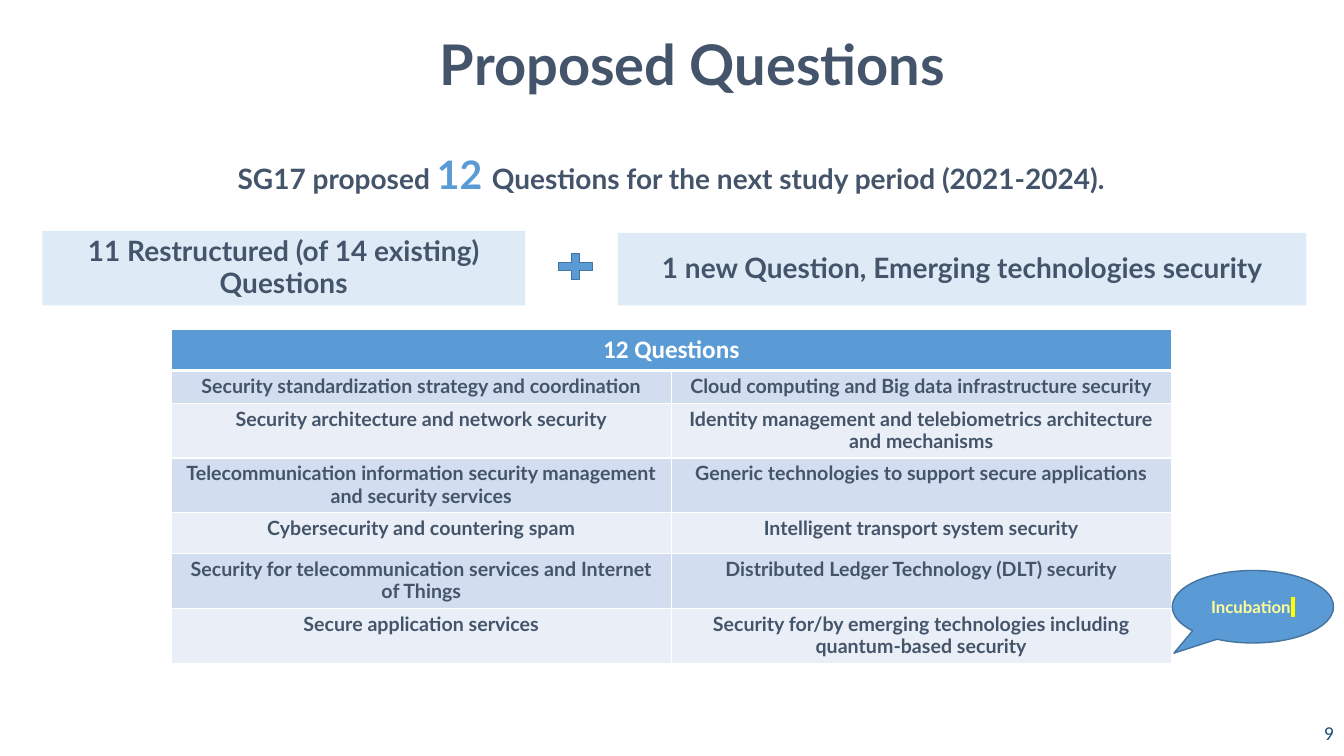
from dataclasses import dataclass

import pptx
import pptx.dml.color
import pptx.enum.shapes
import pptx.enum.text
import pptx.oxml
import pptx.oxml.ns
import pptx.util
from lxml import etree

Pt = pptx.util.Pt
ALIGN = pptx.enum.text.PP_ALIGN
ANCHOR = pptx.enum.text.MSO_ANCHOR
SHAPE = pptx.enum.shapes.MSO_SHAPE
qn = pptx.oxml.ns.qn

NAVY, BLUE, EDGE, PALE, WHITE = "44546A", "5B9BD5", "43739E", "DEEBF7", "FFFFFF"
BANDS = ("D2DEEF", "EAEFF7")
HEADER_HEIGHT = 29.2
FIRST_ROW_HEIGHT = 23.4
COLUMN_WIDTH = 357.1


@dataclass
class Style:
    size: float
    color: str = NAVY
    font: str = "Lato"
    bold: bool = True
    align: ALIGN = ALIGN.CENTER
    spaced: bool = False


@dataclass
class Box:
    left: float
    top: float
    width: float
    height: float
    text: str
    style: Style
    kind: SHAPE | None = None
    fill: str | None = None
    line: str | None = None


BODY = Style(20, spaced=True)
CELL = Style(14, spaced=True)
HEADER = Style(18, WHITE, "Calibri")

TITLE = Box(82.1, 19.4, 825.1, 51.8, "Proposed Questions", Style(40))
SUMMARY = Box(74.2, 106.6, 810.7, 39.6, "SG17 proposed ", BODY)
NEW = Box(441.4, 166.3, 491.8, 51.8, "1 new Question, Emerging technologies security",
          BODY, SHAPE.RECTANGLE, PALE)
RESTRUCTURED = Box(30.2, 164.9, 344.9, 53.3, "11 Restructured (of 14 existing) Questions",
                   BODY, SHAPE.RECTANGLE, PALE)
PLUS = Box(394.6, 177.8, 33.1, 25.2, "", BODY, SHAPE.MATH_PLUS, BLUE, EDGE)
NUMBER = Box(743.8, 511.2, 216, 28.8, "9",
             Style(14, "1F4E79", "Calibri", False, ALIGN.RIGHT))
CALLOUT = Box(837.4, 407.5, 115.2, 51.8, "Incubation", Style(12, "FFFF99"),
              SHAPE.OVAL_CALLOUT, BLUE, EDGE)

QUESTIONS = (
    ("Security standardization strategy and coordination",
     "Cloud computing and Big data infrastructure security"),
    ("Security architecture and network security",
     "Identity management and telebiometrics architecture and mechanisms"),
    ("Telecommunication information security management and security services",
     "Generic technologies to support secure applications"),
    ("Cybersecurity and countering spam", "Intelligent transport system security"),
    ("Security for telecommunication services and Internet of Things",
     "Distributed Ledger Technology (DLT) security"),
    ("Secure application services",
     "Security for/by emerging technologies including quantum-based security"),
)


def rgb(color: str) -> pptx.dml.color.RGBColor:
    return pptx.dml.color.RGBColor.from_string(color)


def format_run(r, style: Style) -> None:
    r.font.size = Pt(style.size)
    r.font.name = style.font
    r.font.bold = style.bold
    r.font.color.rgb = rgb(style.color)


def add_run(p, text: str, style: Style):
    r = p.add_run()
    r.text = text
    format_run(r, style)
    return r


def write(tf, text: str, style: Style) -> None:
    tf.text = text
    p = tf.paragraphs[0]
    p.alignment = style.align
    if style.spaced:
        p.line_spacing = 0.95
        p.space_before = Pt(5)
    for r in p.runs:
        format_run(r, style)


def add_box(s, box: Box):
    frame = [Pt(v) for v in (box.left, box.top, box.width, box.height)]
    if box.kind is None:
        sp = s.shapes.add_textbox(*frame)
    else:
        sp = s.shapes.add_shape(box.kind, *frame)
        sp.shadow.inherit = False
        sp.fill.solid()
        sp.fill.fore_color.rgb = rgb(box.fill)
        if box.line:
            sp.line.color.rgb = rgb(box.line)
            sp.line.width = Pt(1)
        else:
            sp.line.fill.background()
        sp.text_frame.vertical_anchor = ANCHOR.MIDDLE
    sp.text_frame.word_wrap = True
    if box.text:
        write(sp.text_frame, box.text, box.style)
    return sp


def fill_cell(cell, text: str, style: Style, fill: str, bottom: float = 1) -> None:
    write(cell.text_frame, text, style)
    tcPr = cell._tc.get_or_add_tcPr()
    for side, width in (("L", 1), ("R", 1), ("T", 1), ("B", bottom)):
        ln = etree.SubElement(tcPr, qn(f"a:ln{side}"), w=str(Pt(width)))
        solid = etree.SubElement(ln, qn("a:solidFill"))
        etree.SubElement(solid, qn("a:srgbClr"), val=WHITE)
    cell.fill.solid()
    cell.fill.fore_color.rgb = rgb(fill)


def add_questions(s) -> None:
    height = HEADER_HEIGHT * len(QUESTIONS) + FIRST_ROW_HEIGHT
    table = s.shapes.add_table(len(QUESTIONS) + 1, 2, Pt(122.4), Pt(235.4),
                               Pt(2 * COLUMN_WIDTH), Pt(height)).table
    for column in table.columns:
        column.width = Pt(COLUMN_WIDTH)
    for row in table.rows:
        row.height = Pt(HEADER_HEIGHT)
    table.rows[1].height = Pt(FIRST_ROW_HEIGHT)
    table.cell(0, 0).merge(table.cell(0, 1))
    fill_cell(table.cell(0, 0), "12 Questions", HEADER, BLUE, 3)
    for i, pair in enumerate(QUESTIONS):
        for j, text in enumerate(pair):
            fill_cell(table.cell(i + 1, j), text, CELL, BANDS[i % 2])


def add_callout(s) -> None:
    sp = add_box(s, CALLOUT)
    sp.adjustments[0] = -0.49
    sp.adjustments[1] = 0.64
    r = add_run(sp.text_frame.paragraphs[0], " ", CALLOUT.style)
    highlight = etree.Element(qn("a:highlight"))
    etree.SubElement(highlight, qn("a:srgbClr"), val="FFFF00")
    r.font._element.find(qn("a:solidFill")).addnext(highlight)


def main() -> None:
    prs = pptx.Presentation()
    prs.slide_width, prs.slide_height = Pt(960), Pt(540)
    s = prs.slides.add_slide(prs.slide_layouts[6])
    tf = add_box(s, TITLE).text_frame
    tf.margin_left = tf.margin_right = Pt(3.6)
    tf.margin_top = tf.margin_bottom = Pt(1.4)
    p = add_box(s, SUMMARY).text_frame.paragraphs[0]
    add_run(p, "12 ", Style(28, BLUE))
    add_run(p, "Questions for the next study period (2021-2024).", BODY)
    for box in (NEW, RESTRUCTURED, PLUS, NUMBER):
        add_box(s, box)
    add_questions(s)
    add_callout(s)
    prs.save("out.pptx")


if __name__ == "__main__":
    main()
